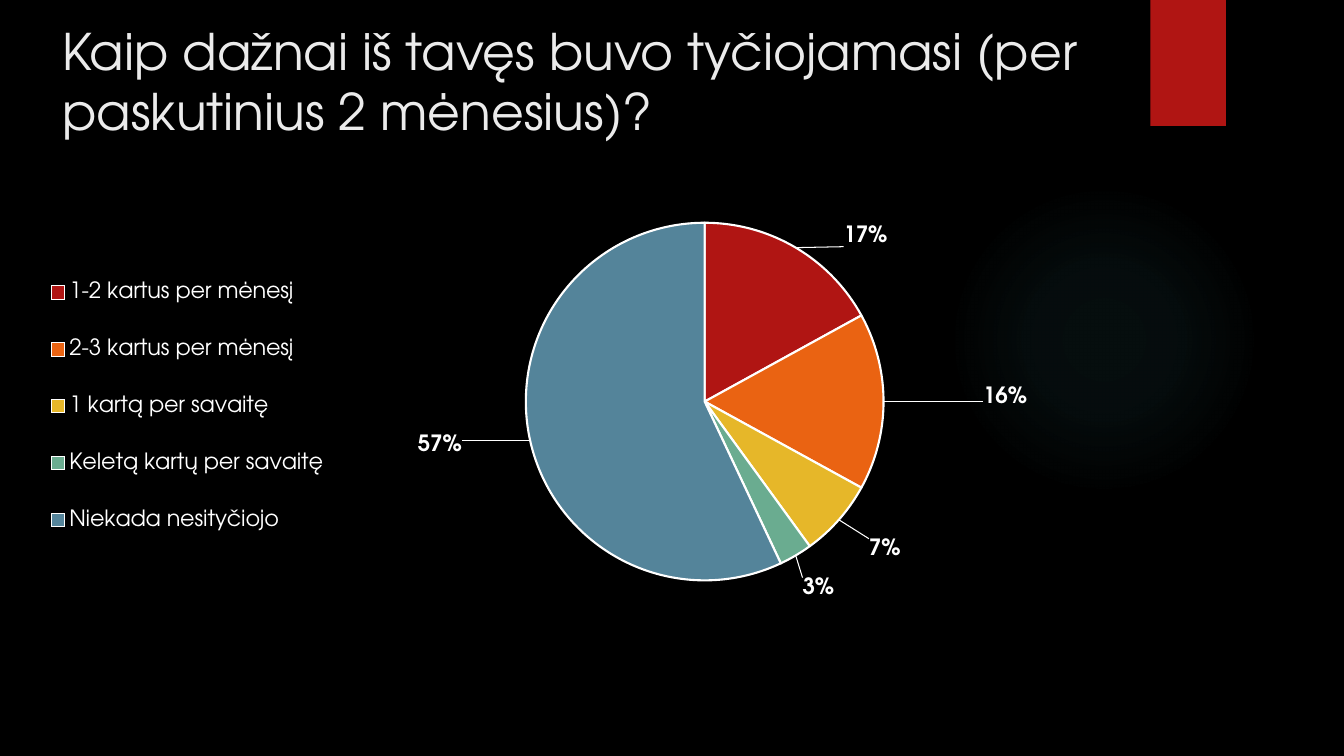
import pptx
import pptx.chart.data
import pptx.dml.color
import pptx.enum.chart
import pptx.enum.shapes
import pptx.enum.text
import pptx.oxml
import pptx.oxml.ns
import pptx.util

Inches = pptx.util.Inches
Pt = pptx.util.Pt
RGBColor = pptx.dml.color.RGBColor
qn = pptx.oxml.ns.qn

# Content
TITLE = "Kaip dažnai iš tavęs buvo tyčiojamasi (per paskutinius 2 mėnesius)?"
FONT = "TeX Gyre Adventor"
BLACK = RGBColor(0x00, 0x00, 0x00)
WHITE = RGBColor(0xFF, 0xFF, 0xFF)
TITLE_GREY = RGBColor(0xEB, 0xEB, 0xEB)
RED = RGBColor(0xB0, 0x15, 0x13)
ORANGE = RGBColor(0xEA, 0x63, 0x12)
YELLOW = RGBColor(0xE6, 0xB7, 0x29)
GREEN = RGBColor(0x6A, 0xAC, 0x90)
BLUE = RGBColor(0x54, 0x84, 0x9A)
GLOW = RGBColor(0x50, 0xB9, 0xC1)
GLOW_STOPS = [(0, 7), (36, 6), (69, 0)]  # position %, opacity %

# Answer, share, slice colour, label shift in inches (right, down)
ANSWERS = [
    ("1-2 kartus per mėnesį", 17, RED, (0.44, 0.04)),
    ("2-3 kartus per mėnesį", 16, ORANGE, (0.93, -0.04)),
    ("1 kartą per savaitę", 7, YELLOW, (0.26, 0.15)),
    ("Keletą kartų per savaitę", 3, GREEN, (0.04, 0.17)),
    ("Niekada nesityčiojo", 57, BLUE, (-0.62, -0.07)),
]
CHART_LEFT, CHART_TOP, CHART_WIDTH, CHART_HEIGHT = 0, 1.68, 12.72, 5.15
PIE_BOX = (5.22, 0.53, 3.55, 3.55)  # inside the chart, inches
LEGEND_BOX = (0.36, 0.76, 3.0, 3.18)

DRAWING = 'xmlns:a="http://schemas.openxmlformats.org/drawingml/2006/main"'
CHART = 'xmlns:c="http://schemas.openxmlformats.org/drawingml/2006/chart"'


def style_font(font, size, color, bold=False):
    font.name = FONT
    font.size = Pt(size)
    font.bold = bold
    font.color.rgb = color


def add_plain_shape(slide, kind, box, color):
    shape = slide.shapes.add_shape(kind, *map(Inches, box))
    shape.shadow.inherit = False
    shape.fill.solid()
    shape.fill.fore_color.rgb = color
    shape.line.fill.background()
    return shape


def manual_layout(settings):
    """Layout element from (tag, value) pairs."""
    parts = "".join(f'<c:{tag} val="{value}"/>' for tag, value in settings)
    return pptx.oxml.parse_xml(
        f"<c:layout {CHART}><c:manualLayout>{parts}</c:manualLayout></c:layout>")


def box_layout(box, inner=False):
    left, top, width, height = box
    target = [("layoutTarget", "inner")] if inner else []
    return manual_layout(target + [
        ("xMode", "edge"), ("yMode", "edge"),
        ("x", round(left / CHART_WIDTH, 3)), ("y", round(top / CHART_HEIGHT, 3)),
        ("w", round(width / CHART_WIDTH, 3)), ("h", round(height / CHART_HEIGHT, 3))])


def replace_layout(parent, layout, index):
    for old in parent.findall(qn("c:layout")):
        parent.remove(old)
    parent.insert(index, layout)


def add_background(slide):
    slide.background.fill.solid()
    slide.background.fill.fore_color.rgb = BLACK
    kinds = pptx.enum.shapes.MSO_SHAPE
    glow = add_plain_shape(slide, kinds.OVAL, (9.41, 1.83, 3.08, 3.08), GLOW)
    stops = "".join(
        f'<a:gs pos="{position * 1000}"><a:srgbClr val="{GLOW}">'
        f'<a:alpha val="{opacity * 1000}"/></a:srgbClr></a:gs>'
        for position, opacity in GLOW_STOPS)
    gradient = pptx.oxml.parse_xml(
        f'<a:gradFill {DRAWING}><a:gsLst>{stops}</a:gsLst><a:path path="circle">'
        '<a:fillToRect l="50000" t="50000" r="50000" b="50000"/></a:path></a:gradFill>')
    properties = glow._element.spPr
    properties.replace(properties.find(qn("a:solidFill")), gradient)
    add_plain_shape(slide, kinds.RECTANGLE, (11.41, 0, 0.75, 1.25), RED)


def add_title(slide):
    title = slide.shapes.add_textbox(*map(Inches, (0.52, 0.15, 10.8, 1.53)))
    frame = title.text_frame
    frame.word_wrap = True
    frame.vertical_anchor = pptx.enum.text.MSO_ANCHOR.TOP
    frame.text = TITLE
    style_font(frame.paragraphs[0].runs[0].font, 36, TITLE_GREY)


def add_pie(slide):
    data = pptx.chart.data.CategoryChartData()
    data.categories = [answer[0] for answer in ANSWERS]
    data.add_series("Series 1", [answer[1] for answer in ANSWERS])
    box = (CHART_LEFT, CHART_TOP, CHART_WIDTH, CHART_HEIGHT)
    chart = slide.shapes.add_chart(
        pptx.enum.chart.XL_CHART_TYPE.PIE, *map(Inches, box), data).chart
    chart.has_title = False
    style_font(chart.font, 10, WHITE)
    plot = chart.plots[0]
    plot.vary_by_categories = True
    replace_layout(chart._chartSpace.chart.plotArea, box_layout(PIE_BOX, True), 0)

    # Legend
    chart.has_legend = True
    legend = chart.legend
    legend.position = pptx.enum.chart.XL_LEGEND_POSITION.BOTTOM
    legend.include_in_layout = False
    style_font(legend.font, 16, WHITE)
    replace_layout(legend._element, box_layout(LEGEND_BOX), 1)

    # Labels and leader lines
    series = plot.series[0]
    outside = pptx.enum.chart.XL_LABEL_POSITION.OUTSIDE_END
    labels = series.data_labels
    labels.show_percentage = True
    labels.show_value = False
    labels.position = outside
    style_font(labels.font, 16, WHITE, True)
    labels_element = labels._element
    for old in labels_element.findall(qn("c:showLeaderLines")):
        labels_element.remove(old)
    labels_element.append(pptx.oxml.parse_xml(f'<c:showLeaderLines {CHART} val="1"/>'))
    labels_element.append(pptx.oxml.parse_xml(
        f'<c:leaderLines {CHART} {DRAWING}><c:spPr><a:ln w="9525"><a:solidFill>'
        f'<a:srgbClr val="{WHITE}"/></a:solidFill></a:ln></c:spPr></c:leaderLines>'))

    # Slices
    for index, (_, _, color, (right, down)) in enumerate(ANSWERS):
        point = series.points[index]
        point.format.fill.solid()
        point.format.fill.fore_color.rgb = color
        point.format.line.color.rgb = WHITE
        point.format.line.width = Pt(1.5)
        label = point.data_label
        label.position = outside
        style_font(label.font, 16, WHITE, True)
        element = labels_element.findall(qn("c:dLbl"))[index]
        shift = manual_layout([("x", round(right / CHART_WIDTH, 3)),
                               ("y", round(down / CHART_HEIGHT, 3))])
        replace_layout(element, shift, 1)
        element.find(qn("c:showVal")).set("val", "0")
        element.find(qn("c:showPercent")).set("val", "1")


def main():
    presentation = pptx.Presentation()
    presentation.slide_width = Inches(13.33)
    presentation.slide_height = Inches(7.5)
    slide = presentation.slides.add_slide(presentation.slide_layouts[6])
    add_background(slide)
    add_title(slide)
    add_pie(slide)
    presentation.save("out.pptx")


if __name__ == "__main__":
    main()
